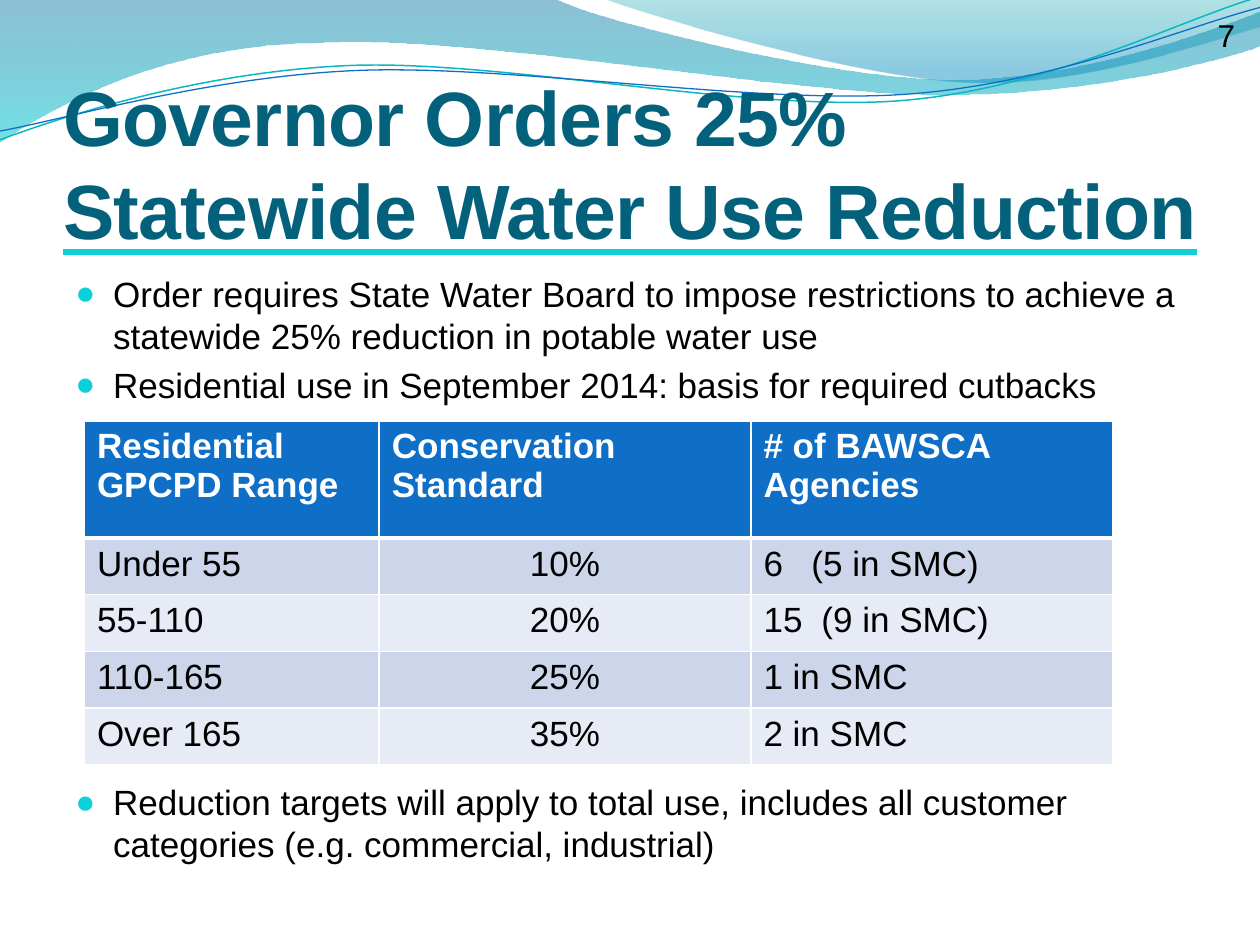
from math import cos, radians, sin
from lxml.etree import SubElement as Sub
from pptx import Presentation
from pptx.dml.color import RGBColor
from pptx.enum.shapes import MSO_CONNECTOR as Conn
from pptx.enum.text import MSO_ANCHOR as Anchor, MSO_AUTO_SIZE as Auto, PP_ALIGN as Align
from pptx.oxml.ns import qn
from pptx.util import Inches, Pt


def color(text):
    return RGBColor.from_string(text)


def write(para, text, size=20, tint="000000", bold=False):
    run = para.add_run()
    run.text = text
    font = run.font
    font.name, font.size, font.bold = "Arial", Pt(size), bold
    font.color.rgb = color(tint)
    return run


deck = Presentation()
deck.slide_width, deck.slide_height = Inches(10), Inches(7.5)
slide = deck.slides.add_slide(deck.slide_layouts[5])
shapes = slide.shapes

waves = [
    ([[(0, -0.01)],
      [(4.4, -0.01)],
      [(4.76, 0.17), (6.64, 0.63), (7.58, 0.63)],
      [(8.53, 0.63), (9.58, 0.26), (10, 0.09)],
      [(10.01, 0.36)],
      [(9.83, 0.44), (8.7, 0.76), (7.46, 0.75)],
      [(6.22, 0.75), (3.82, 0.28), (2.57, 0.34)],
      [(1.29, 0.35), (0.46, 0.83), (-0.01, 1.13)]],
     [(0, "0074A1", 45), (100, "00C6CF", 55)], None),
    ([[(4.79, -0.01)],
      [(5.09, 0.11), (6.82, 0.62), (7.69, 0.65)],
      [(8.56, 0.69), (9.61, 0.32), (10, 0.21)],
      [(10, 0)]],
     [(0, "00A1A9", 30), (80, "008BBF", 45)], None),
    ([[(0, 1.11)],
      [(0.48, 0.93), (1.58, 0.57), (2.77, 0.52)],
      [(3.95, 0.47), (5.93, 0.89), (7.13, 0.8)],
      [(8.33, 0.71), (9.38, 0.15), (9.98, -0.02)]],
     None, ("0AB8BF", 0.85, 4.99, 0.57)),
    ([[(0, 1.04)],
      [(0.47, 0.96), (1.64, 0.61), (2.83, 0.56)],
      [(4.03, 0.51), (5.97, 0.83), (7.17, 0.75)],
      [(8.36, 0.67), (9.41, 0.21), (10, 0.06)]],
     None, ("0F6FC6", 0.75, 5, 0.59)),
]
tilt = 2.7
si, co = sin(radians(tilt)), cos(radians(tilt))
for parts, stops, pen in waves:
    dots = [dot for part in parts for dot in part]
    if pen:
        tint, width, mx, my = pen
        dots = [(mx + (x - mx) * co - (y - my) * si,
                 my + (x - mx) * si + (y - my) * co) for x, y in dots]
    pts = [(Inches(x), Inches(y)) for x, y in dots]
    form = shapes.build_freeform(*pts[0])
    form.add_line_segments(pts[1:], close=bool(stops))
    wave = form.convert_to_shape()
    wave.shadow.inherit = False
    legs = iter(list(wave.element.iter(qn("a:lnTo"))))
    for part in parts[1:]:
        leg = next(legs)
        if len(part) == 3:
            leg.tag = qn("a:cubicBezTo")
            for more in (next(legs), next(legs)):
                leg.append(more[0])
                more.getparent().remove(more)
    if pen:
        wave.rotation = 360 - tilt
        wave.fill.background()
        wave.line.color.rgb, wave.line.width = color(tint), Pt(width)
        continue
    wave.line.fill.background()
    wave.fill.gradient()
    wave.fill.gradient_angle = 270
    nodes = wave.element.iter(qn("a:gs"))
    for stop, node, (pos, tint, alpha) in zip(wave.fill.gradient_stops, nodes, stops):
        stop.color.rgb = color(tint)
        node.set("pos", str(pos * 1000))
        Sub(node[0], qn("a:alpha"), val=str(alpha * 1000))

box = shapes.add_textbox(Inches(7.55), Inches(0.08), Inches(2.35), Inches(0.4))
box.text_frame.word_wrap = True
para = box.text_frame.paragraphs[0]
para.alignment = Align.RIGHT
write(para, "7", 18)

rule = shapes.add_connector(Conn.STRAIGHT, Inches(0.5), Inches(2), Inches(9.5), Inches(2))
rule.line.color.rgb, rule.line.width = color("0BD0D9"), Pt(3)
Sub(rule.element.spPr, qn("a:effectLst"))

title = shapes.title
title.left, title.top = Inches(0.5), Inches(0.77)
title.width, title.height = Inches(9), Inches(1.25)
shapes.element.append(title.element)
frame = title.text_frame
frame.word_wrap, frame.auto_size = True, Auto.NONE
frame.vertical_anchor = Anchor.BOTTOM
frame.margin_left = frame.margin_right = frame.margin_bottom = 0
frame.margin_top = Inches(0.05)
para = frame.paragraphs[0]
para.alignment = Align.LEFT
run = write(para, "Governor Orders 25% Statewide Water Use Reduction", 44, "04617B", True)
run._r.get_or_add_rPr().set("spc", "-40")

body = shapes.add_textbox(Inches(0.5), Inches(2.12), Inches(9), Inches(4.8))
frame = body.text_frame
frame.word_wrap = True
frame.margin_top = Inches(0.04)
points = [
    ("Order requires State Water Board to impose restrictions to achieve a "
     "statewide 25% reduction in potable water use", 0),
    ("Residential use in September 2014: basis for required cutbacks", 4),
    ("Reduction targets will apply to total use, includes all customer "
     "categories (e.g. commercial, industrial)", 214.5),
]
for i, (text, gap) in enumerate(points):
    para = frame.add_paragraph() if i else frame.paragraphs[0]
    props = para._p.get_or_add_pPr()
    props.set("marL", str(Inches(0.3)))
    props.set("indent", str(Inches(-0.3)))
    Sub(Sub(props, qn("a:buClr")), qn("a:srgbClr"), val="0BD0D9")
    Sub(props, qn("a:buSzPct"), val="95000")
    Sub(props, qn("a:buFont"), typeface="Arial")
    Sub(props, qn("a:buChar"), char="●")
    if gap:
        para.space_before = Pt(gap)
    write(para, text)

rows = [
    ("Residential GPCPD Range", "Conservation Standard", "# of BAWSCA Agencies"),
    ("Under 55", "10%", "6\t(5 in SMC)"),
    ("55-110", "20%", "15\t(9 in SMC)"),
    ("110-165", "25%", "1 in SMC"),
    ("Over 165", "35%", "2 in SMC"),
]
stops = {1: 0.38, 2: 0.46}
grid = shapes.add_table(5, 3, Inches(0.67), Inches(3.34), Inches(8.17), Inches(2.73)).table
for col, width in zip(grid.columns, (2.34, 2.95, 2.87)):
    col.width = Inches(width)
for r, texts in enumerate(rows):
    grid.rows[r].height = Inches(0.45 if r else 0.93)
    for c, text in enumerate(texts):
        cell = grid.cell(r, c)
        props = cell._tc.get_or_add_tcPr()
        for side in "LRTB":
            thick = 3 if (r, side) in ((0, "B"), (1, "T")) else 1
            edge = Sub(props, qn("a:ln" + side), w=str(Pt(thick)))
            Sub(Sub(edge, qn("a:solidFill")), qn("a:srgbClr"), val="FFFFFF")
        cell.fill.solid()
        cell.fill.fore_color.rgb = color(("E7EBF5", "CCD5EA")[r % 2] if r else "0F6FC6")
        para = cell.text_frame.paragraphs[0]
        if r and c == 1:
            para.alignment = Align.CENTER
        if "\t" in text:
            tabs = Sub(para._p.get_or_add_pPr(), qn("a:tabLst"))
            Sub(tabs, qn("a:tab"), pos=str(Inches(stops[r])), algn="l")
        write(para, text, 20, "000000" if r else "FFFFFF", not r)

deck.save("out.pptx")
